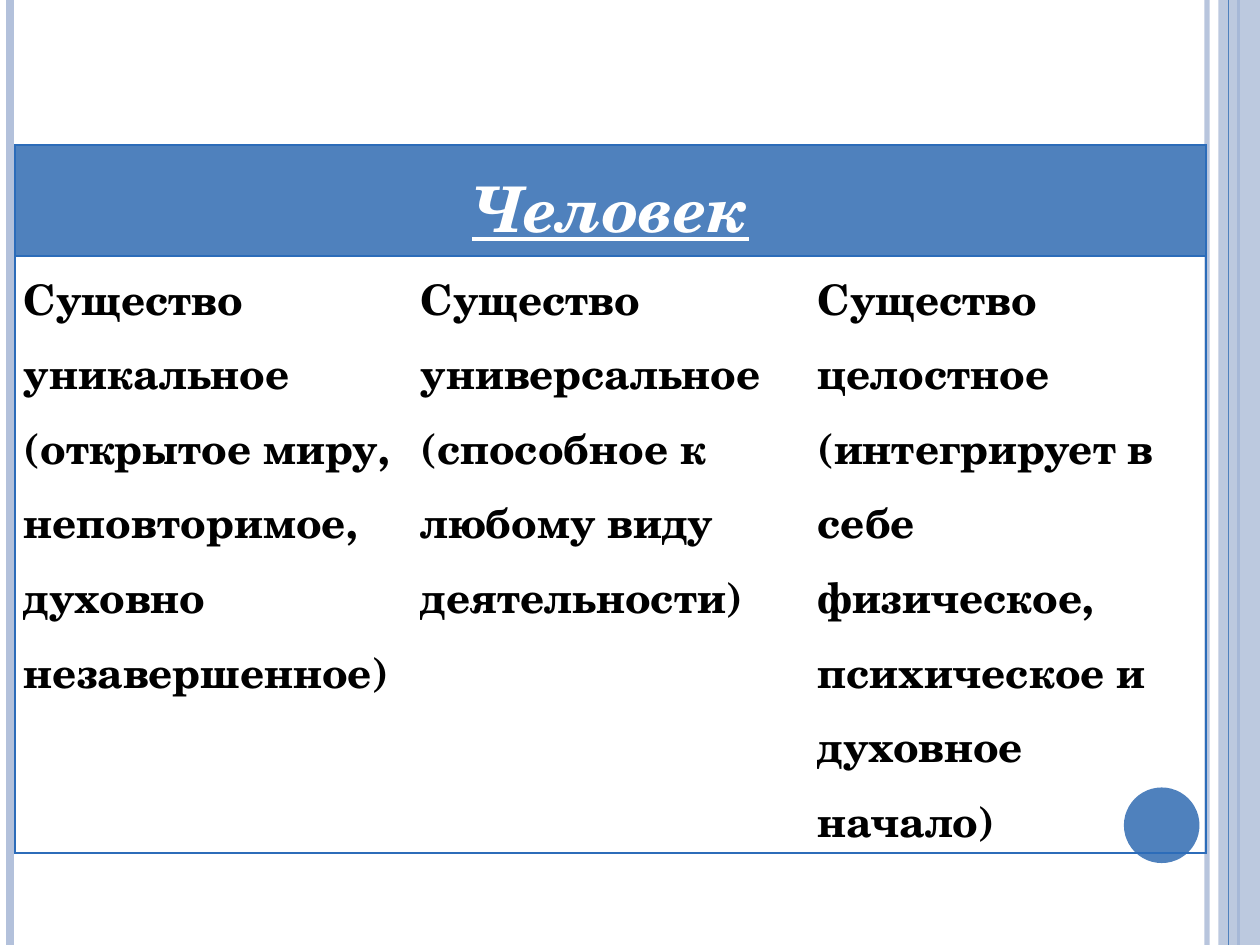
"""Build a slide with a table on the three traits of a human being."""
import pptx
import pptx.util
import pptx.dml.color
import pptx.enum.shapes
import pptx.enum.text
import pptx.oxml.ns
from lxml import etree

Inches = pptx.util.Inches
Pt = pptx.util.Pt
RGBColor = pptx.dml.color.RGBColor
Shape = pptx.enum.shapes.MSO_SHAPE
Align = pptx.enum.text.PP_ALIGN
qn = pptx.oxml.ns.qn

BLUE = RGBColor(0x4F, 0x81, 0xBD)
PALE = RGBColor(0xB3, 0xC1, 0xDB)
EDGE = RGBColor(0x2C, 0x6C, 0xB9)
WHITE = RGBColor(0xFF, 0xFF, 0xFF)
BLACK = RGBColor(0, 0, 0)
FONT = "TeX Gyre Schola"

HEAD = "Человек"
TRAITS = [
    "Существо уникальное (открытое миру, неповторимое, духовно незавершенное)",
    "Существо универсальное (способное к любому виду деятельности)",
    "Существо целостное (интегрирует в себе физическое, психическое и духовное начало)",
]
WIDE, HIGH = 10, 7.5
LEFT, TOP, COL = 0.12, 1.15, 3.15
ROWS = [0.7, 4.11]
BACK = [(9.58, PALE, 3, 93), (0.08, PALE, 4.5, 100), (9.83, BLUE, 1.5, 100)]
FRONT = [(9.75, BLUE, 0.75, 100)]


def fade(fill, alpha):
    """Make a solid fill partly transparent."""
    color = fill.find(".//" + qn("a:srgbClr"))
    etree.SubElement(color, qn("a:alpha"), val=str(alpha * 1000))


def stripe(slide, x, color, width, alpha):
    """Draw a full-height vertical line."""
    line = slide.shapes.add_connector(
        pptx.enum.shapes.MSO_CONNECTOR.STRAIGHT,
        Inches(x), Inches(0), Inches(x), Inches(HIGH))
    line.line.color.rgb = color
    line.line.width = Pt(width)
    props = line._element.spPr
    if alpha < 100:
        fade(props, alpha)
    etree.SubElement(props, qn("a:effectLst"))


def block(slide, kind, box, color):
    """Add a plain filled shape."""
    shape = slide.shapes.add_shape(kind, *map(Inches, box))
    shape.shadow.inherit = False
    shape.fill.solid()
    shape.fill.fore_color.rgb = color
    shape.line.fill.background()
    return shape


def write(cell, text, size=24, color=BLACK, align=Align.LEFT, fancy=False):
    """Put formatted text in a cell."""
    cell.margin_left = cell.margin_right = Inches(0.07)
    cell.margin_top = cell.margin_bottom = 0
    para = cell.text_frame.paragraphs[0]
    para.alignment = align
    para.line_spacing = 1.15
    run = para.add_run()
    run.text = text
    font = run.font
    font.name, font.size, font.bold = FONT, Pt(size), True
    font.italic = font.underline = fancy
    font.color.rgb = color


def border(cell, sides):
    """Draw the named sides of a cell and hide the rest."""
    props = cell._tc.get_or_add_tcPr()
    for spot, side in enumerate("LRTB"):
        line = etree.Element(qn("a:ln" + side), w=str(Pt(1)))
        if side in sides:
            fill = etree.SubElement(line, qn("a:solidFill"))
            etree.SubElement(fill, qn("a:srgbClr"), val=str(EDGE))
        else:
            etree.SubElement(line, qn("a:noFill"))
        props.insert(spot, line)


def fill_table(slide):
    """Add the table with its merged heading."""
    count = len(TRAITS)
    table = slide.shapes.add_table(
        len(ROWS), count, Inches(LEFT), Inches(TOP),
        Inches(COL * count), Inches(sum(ROWS))).table
    table.horz_banding = False
    for col in table.columns:
        col.width = Inches(COL)
    for row, high in zip(table.rows, ROWS):
        row.height = Inches(high)
    head = table.cell(0, 0)
    head.merge(table.cell(0, count - 1))
    write(head, HEAD, size=36, color=WHITE, align=Align.CENTER, fancy=True)
    for num, text in enumerate(TRAITS):
        top, body = table.cell(0, num), table.cell(1, num)
        top.fill.solid()
        top.fill.fore_color.rgb = BLUE
        border(top, "LRTB")
        write(body, text)
        body.fill.background()
        ends = {0: "L", count - 1: "R"}
        border(body, "TB" + ends.get(num, ""))


def main():
    """Build and save the slide."""
    deck = pptx.Presentation()
    deck.slide_width, deck.slide_height = Inches(WIDE), Inches(HIGH)
    slide = deck.slides.add_slide(deck.slide_layouts[6])
    for item in BACK:
        stripe(slide, *item)
    band = block(slide, Shape.RECTANGLE, (9.67, 0, 0.33, HIGH), PALE)
    fade(band._element.spPr, 87)
    for item in FRONT:
        stripe(slide, *item)
    block(slide, Shape.OVAL, (8.92, 6.25, 0.6, 0.6), BLUE)
    fill_table(slide)
    deck.save("out.pptx")


if __name__ == "__main__":
    main()
